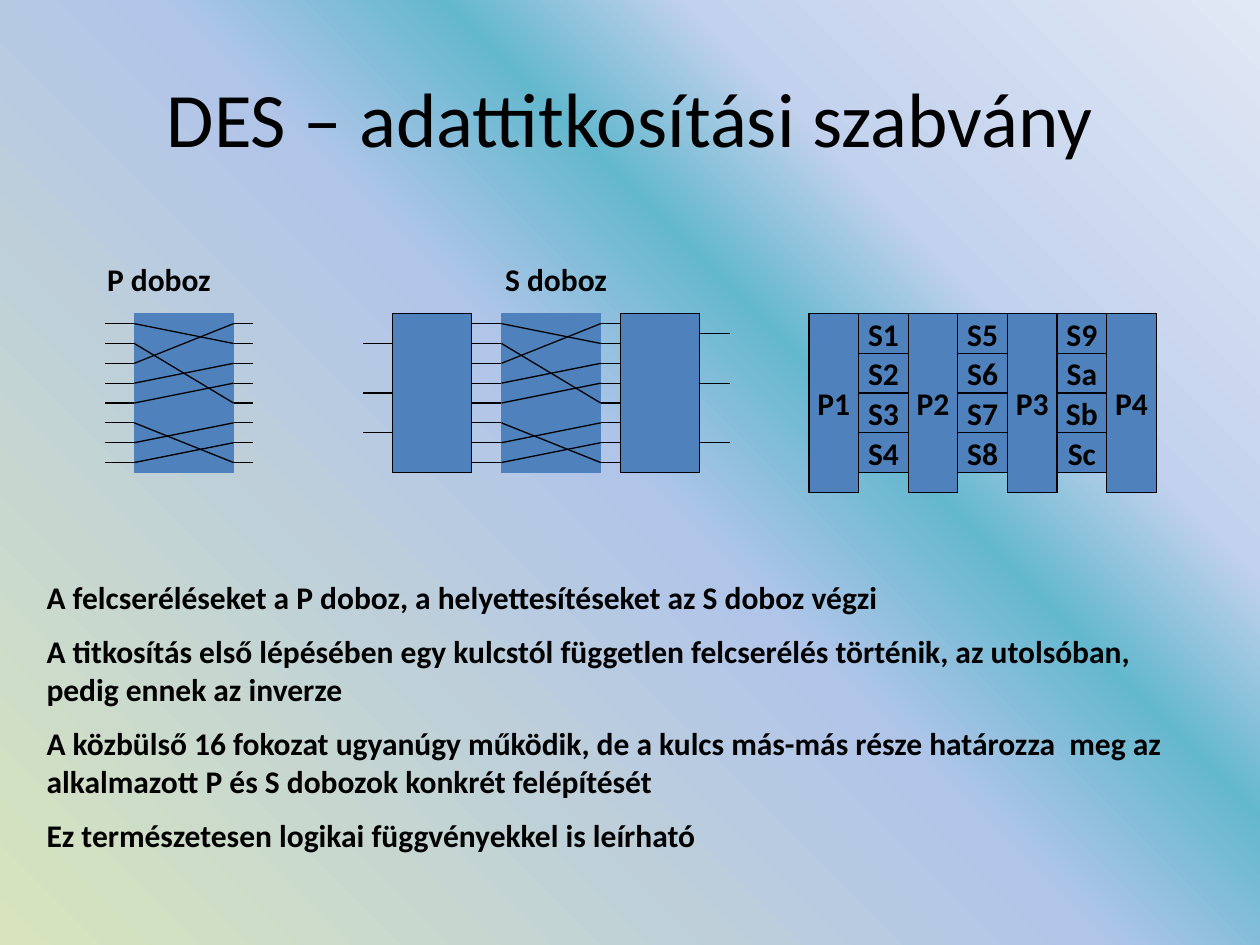
"""Build a slide on the P and S boxes of the DES encryption standard."""
from dataclasses import dataclass

from lxml import etree
from pptx import Presentation
from pptx.dml.color import RGBColor
from pptx.enum.shapes import MSO_CONNECTOR, MSO_SHAPE
from pptx.enum.text import MSO_ANCHOR, MSO_AUTO_SIZE, PP_ALIGN
from pptx.oxml.ns import qn
from pptx.util import Inches, Pt

RECTANGLE = MSO_SHAPE.RECTANGLE
PROCESS = MSO_SHAPE.FLOWCHART_PROCESS
STRAIGHT = MSO_CONNECTOR.STRAIGHT
LEFT, CENTER = PP_ALIGN.LEFT, PP_ALIGN.CENTER
TOP, MIDDLE = MSO_ANCHOR.TOP, MSO_ANCHOR.MIDDLE
GROW = MSO_AUTO_SIZE.SHAPE_TO_FIT_TEXT
LEFT_SIDE, RIGHT_SIDE = 1, 3


@dataclass(frozen=True)
class Theme:
    font: str = "Calibri"
    ink: RGBColor = RGBColor(0x00, 0x00, 0x00)
    box: RGBColor = RGBColor(0x4F, 0x81, 0xBD)
    title_size: int = 44
    text_size: int = 18
    paragraph_gap: float = 9.4
    line_width: float = 0.75
    # position in percent, colour, opacity in percent
    backdrop: tuple = (
        (0, "953735", 100),
        (0, "D7E4BD", 100),
        (50, "B1C5E9", 100),
        (63, "64B8CE", 38),
        (74, "C2D1ED", 100),
        (100, "E1E8F5", 100),
    )


theme = Theme()
UNIT = 1.26 / 8
ORIGIN_X, ORIGIN_Y = 0.83, 2.49
PIN_ROWS = 8
CROSSING = (1, 4, 0, 2, 3, 7, 5, 6)
PIN_LENGTH = 1.5

presentation = Presentation()
presentation.slide_width = Inches(10)
presentation.slide_height = Inches(7.5)
slide = presentation.slides.add_slide(presentation.slide_layouts[6])


def add_block(column, row, width, height, paragraphs=(), kind=None, line=theme.ink,
              size=theme.text_size, bold=True, align=CENTER, anchor=MIDDLE):
    """Place a filled shape, or a text box when no kind is given, on the grid."""
    frame = (Inches(ORIGIN_X + column * UNIT), Inches(ORIGIN_Y + row * UNIT),
             Inches(width * UNIT), Inches(height * UNIT))
    if kind is None:
        shape = slide.shapes.add_textbox(*frame)
    else:
        shape = slide.shapes.add_shape(kind, *frame)
        shape.shadow.inherit = False
        shape.fill.solid()
        shape.fill.fore_color.rgb = theme.box
        shape.line.color.rgb = line
        shape.line.width = Pt(theme.line_width)
    text_frame = shape.text_frame
    text_frame.word_wrap = kind is None
    text_frame.vertical_anchor = anchor
    for index, text in enumerate(paragraphs):
        paragraph = text_frame.add_paragraph() if index else text_frame.paragraphs[0]
        paragraph.alignment = align
        if index:
            paragraph.space_before = Pt(theme.paragraph_gap)
        run = paragraph.add_run()
        run.text = text
        run.font.name = theme.font
        run.font.size = Pt(size)
        run.font.bold = bold
        run.font.color.rgb = theme.ink
    return shape


def add_wire(start, end, begin=None, finish=None):
    """Draw a line between two grid points, joined to (shape, side) where given."""
    (x1, y1), (x2, y2) = [
        (Inches(ORIGIN_X + column * UNIT), Inches(ORIGIN_Y + row * UNIT))
        for column, row in (start, end)
    ]
    wire = slide.shapes.add_connector(STRAIGHT, x1, y1, x2, y2)
    wire.line.color.rgb = theme.ink
    wire.line.width = Pt(theme.line_width)
    etree.SubElement(wire.element.spPr, qn("a:effectLst"))
    if begin:
        wire.begin_connect(*begin)
    if finish:
        wire.end_connect(*finish)


# Background
slide.background.fill.gradient()
gradient = slide.element.xpath(".//p:bg//a:gradFill")[0]
for child in list(gradient):
    gradient.remove(child)
stops = etree.SubElement(gradient, qn("a:gsLst"))
for position, color, opacity in theme.backdrop:
    stop = etree.SubElement(stops, qn("a:gs"), pos=str(position * 1000))
    tint = etree.SubElement(stop, qn("a:srgbClr"), val=color)
    if opacity < 100:
        etree.SubElement(tint, qn("a:alpha"), val=str(opacity * 1000))
circle = etree.SubElement(gradient, qn("a:path"), path="circle")
etree.SubElement(circle, qn("a:fillToRect"), t="100000", r="100000")

# Title
add_block(-2.1, -13.9, 57.15, 7.95, ["DES – adattitkosítási szabvány"],
          size=theme.title_size, bold=False)

# Permutation boxes, alone and inside the S box
for column in (1.5, 20):
    rows = [add_block(column, row, 5, 1, kind=PROCESS, line=theme.box)
            for row in range(PIN_ROWS)]
    for row, shape in enumerate(rows):
        middle = row + 0.5
        target = CROSSING[row]
        add_wire((column, middle), (column - PIN_LENGTH, middle), (shape, LEFT_SIDE))
        add_wire((column + 5, middle), (column + 6, middle), (shape, RIGHT_SIDE))
        add_wire((column, middle), (column + 5, target + 0.5),
                 (shape, LEFT_SIDE), (rows[target], RIGHT_SIDE))

# Decoder and encoder of the S box
for column, edge, tip, side, pin_rows in (
    (14.5, 14.5, 14.5 - PIN_LENGTH, LEFT_SIDE, (1.5, 4, 6)),
    (26, 30, 30 + PIN_LENGTH, RIGHT_SIDE, (1, 3.5, 6.5)),
):
    coder = add_block(column, 0, 4, PIN_ROWS, kind=RECTANGLE)
    for row in pin_rows:
        joint = (coder, side) if row == PIN_ROWS / 2 else None
        add_wire((edge, row), (tip, row), joint)

# Labels and explanation
explanation = [
    "A felcseréléseket a P doboz, a helyettesítéseket az S doboz végzi",
    "A titkosítás első lépésében egy kulcstól független felcserélés történik, "
    "az utolsóban, pedig ennek az inverze",
    "A közbülső 16 fokozat ugyanúgy működik, de a kulcs más-más része határozza  "
    "meg az alkalmazott P és S dobozok konkrét felépítését",
    "Ez természetesen logikai függvényekkel is leírható",
]
for column, row, width, height, paragraphs, align in (
    (-0.5, -3, 10.5, 2.55, ["P doboz"], LEFT),
    (14, -3, 17.5, 2.55, ["S doboz"], CENTER),
    (-3.55, 13, 58.5, 15, explanation, LEFT),
):
    text_box = add_block(column, row, width, height, paragraphs, align=align, anchor=TOP)
    text_box.text_frame.auto_size = GROW

# Cascade of P and S stages
stages = (["P1"], ["S1", "S2", "S3", "S4"], ["P2"], ["S5", "S6", "S7", "S8"],
          ["P3"], ["S9", "Sa", "Sb", "Sc"], ["P4"])
for stage, names in enumerate(stages):
    height = 9 if len(names) == 1 else 2
    for index, name in enumerate(names):
        add_block(35.5 + stage * 2.5, index * height, 2.5, height, [name], kind=RECTANGLE)

presentation.save("out.pptx")
